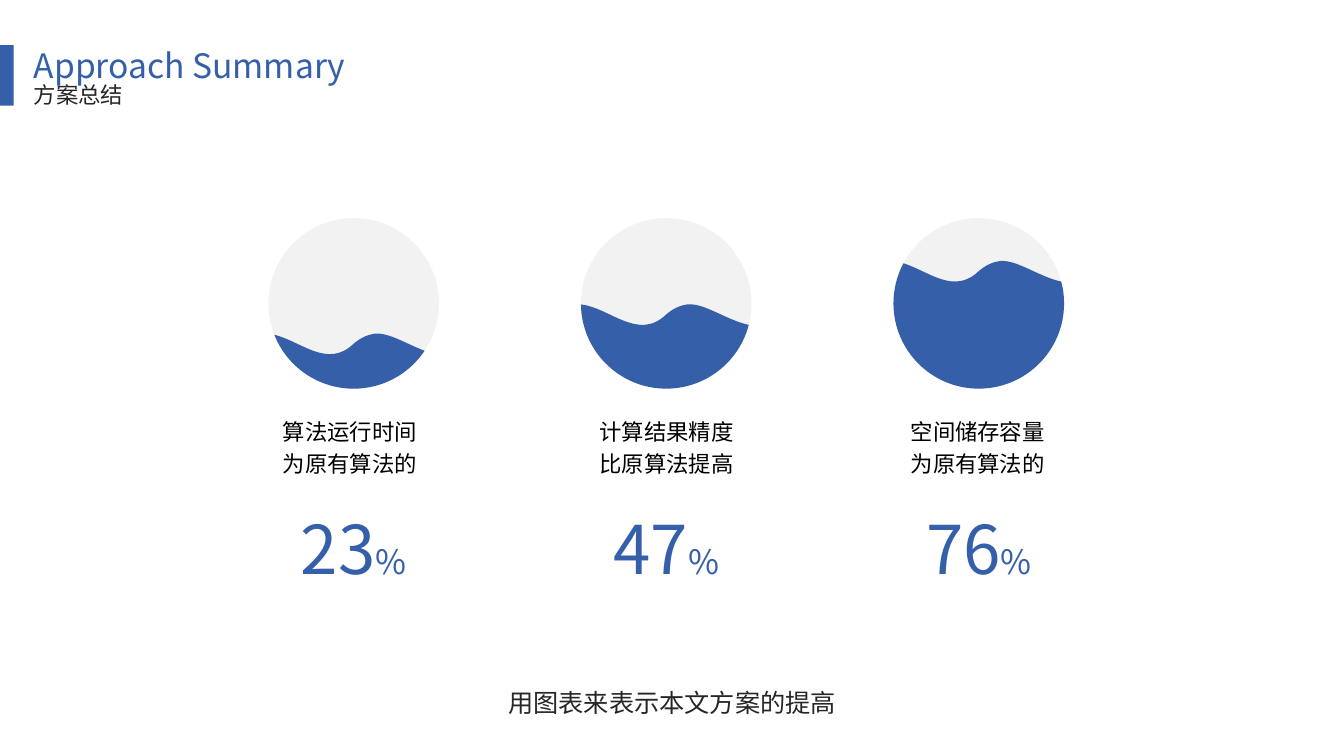
from dataclasses import dataclass
from math import atan2, cos, hypot, pi, sin, tan

from lxml.etree import SubElement
from pptx import Presentation
from pptx.dml.color import RGBColor
from pptx.enum.shapes import MSO_SHAPE
from pptx.enum.text import MSO_ANCHOR, MSO_AUTO_SIZE, PP_ALIGN
from pptx.oxml.ns import qn
from pptx.shapes.autoshape import Shape
from pptx.slide import Slide
from pptx.text.text import TextFrame, _Paragraph
from pptx.util import Inches, Pt

BLUE = RGBColor(0x36, 0x5F, 0xAA)
PALE = RGBColor(0xF2, 0xF2, 0xF2)
DARK = RGBColor(0x26, 0x26, 0x26)
BLACK = RGBColor(0, 0, 0)
FONT = "Noto Sans CJK SC"

CELL = Inches(0.1)
FIRST_COLUMN, COLUMN_STEP = 35.08, 31
GAUGE_ROW, RADIUS = 30.1, 8.46
CAPTION_ROW, PERCENT_ROW = 40.45, 48.25

Point = tuple[float, float]
Curve = list[Point]
WAVE: list[Curve] = [
    [(-8.5, 0), (-5.6, 0.3), (-2.8, 3.7), (0, 1)],
    [(0, 1), (0.7, 0.4), (1.4, 0.1), (2.1, 0)],
    [(2.1, 0), (3.9, -0.15), (6.1, 1.7), (8.5, 2.1)],
]


@dataclass(frozen=True)
class Gauge:
    """One result: its percentage, caption and the row of its wave crest."""

    percent: int
    caption: str
    crest_row: float
    caption_center: float
    caption_width: float


GAUGES = [
    Gauge(23, "算法运行时间为原有算法的", 33.1, 34.7, 16.6),
    Gauge(47, "计算结果精度比原算法提高", 30.2, 66.1, 15.8),
    Gauge(76, "空间储存容量为原有算法的", 25.9, 96.97, 16.2),
]


def cells(*lengths: float) -> list[int]:
    """Turn grid lengths into slide units."""
    return [round(length * CELL) for length in lengths]


def paint(shape: Shape, color: RGBColor) -> None:
    """Give a shape a flat fill without outline or shadow."""
    shape.fill.solid()
    shape.fill.fore_color.rgb = color
    shape.line.fill.background()
    shape.shadow.inherit = False


def add_run(paragraph: _Paragraph, text: str, size: float, color: RGBColor) -> None:
    """Add one run in the deck's font."""
    run = paragraph.add_run()
    run.text = text
    run.font.size = Pt(size)
    run.font.color.rgb = color
    run.font.name = FONT
    SubElement(run.font._element, qn("a:ea"), typeface=FONT)


def add_text(slide: Slide, left: float, top: float, width: float, height: float,
             wrap: bool = True) -> TextFrame:
    """Add a centred text box that grows with its text."""
    frame = slide.shapes.add_textbox(*cells(left, top, width, height)).text_frame
    frame.word_wrap = wrap
    frame.auto_size = MSO_AUTO_SIZE.SHAPE_TO_FIT_TEXT
    frame.paragraphs[0].alignment = PP_ALIGN.CENTER
    return frame


def fill_heading(heading: Shape, text: str, top: float, height: float,
                 size: float, color: RGBColor, spacing: float) -> None:
    """Place a heading placeholder and write its text."""
    heading.left, heading.top, heading.width, heading.height = cells(2.35, top, 71.7, height)
    frame = heading.text_frame
    frame.auto_size = MSO_AUTO_SIZE.NONE
    frame.vertical_anchor = MSO_ANCHOR.BOTTOM
    paragraph = frame.paragraphs[0]
    paragraph.alignment = PP_ALIGN.LEFT
    paragraph.line_spacing = spacing
    paragraph.space_before = Pt(0)
    properties = paragraph._p.get_or_add_pPr()
    properties.set("marL", "0")
    properties.set("indent", "0")
    SubElement(properties, qn("a:buNone"))
    add_run(paragraph, text, size, color)


def split(curve: Curve, t: float) -> tuple[Curve, Curve]:
    """Cut a cubic curve in two at t."""
    before, after, level = [], [], curve
    while level:
        before.append(level[0])
        after.insert(0, level[-1])
        level = [(a + (c - a) * t, b + (d - b) * t)
                 for (a, b), (c, d) in zip(level, level[1:])]
    return before, after


def clip_end(curve: Curve) -> Curve:
    """Keep the part of a curve from its start inside the disc to the rim."""
    low, high = 0.0, 1.0
    for _ in range(30):
        middle = (low + high) / 2
        if hypot(*split(curve, middle)[0][-1]) < RADIUS:
            low = middle
        else:
            high = middle
    return split(curve, low)[0]


def rim_curve(start: float, end: float) -> Curve:
    """Return a cubic curve along the rim between two angles."""
    pull = 4 / 3 * tan((end - start) / 4)
    unit = [(cos(start), sin(start)),
            (cos(start) - pull * sin(start), sin(start) + pull * cos(start)),
            (cos(end) + pull * sin(end), sin(end) - pull * cos(end)),
            (cos(end), sin(end))]
    return [(RADIUS * x, RADIUS * y) for x, y in unit]


def liquid_outline(crest: float) -> Curve:
    """Return the knots and handles of the wave and the rim below it."""
    left, middle, right = [[(x, y + crest) for x, y in curve] for curve in WAVE]
    surface = [clip_end(left[::-1])[::-1], middle, clip_end(right)]
    (first_x, first_y), (last_x, last_y) = surface[0][0], surface[-1][-1]
    start, end = atan2(last_y, last_x), atan2(first_y, first_x) % (2 * pi)
    angles = [start, *(a for a in (0, pi / 2, pi) if start < a < end), end]
    curves = surface + [rim_curve(a, b) for a, b in zip(angles, angles[1:])]
    return [surface[0][0]] + [point for curve in curves for point in curve[1:]]


def bend(shape: Shape) -> None:
    """Turn every three straight segments of an outline into one cubic curve."""
    outline = next(shape._element.iter(qn("a:path")))
    lines = outline.findall(qn("a:lnTo"))
    for first in range(0, len(lines), 3):
        curve = SubElement(outline, qn("a:cubicBezTo"))
        lines[first].addprevious(curve)
        for line in lines[first:first + 3]:
            curve.append(line[0])
            outline.remove(line)


def add_gauge(slide: Slide, gauge: Gauge, center: float) -> None:
    """Draw a filled disc with its caption and percentage."""
    group = slide.shapes.add_group_shape()
    disc = group.shapes.add_shape(MSO_SHAPE.OVAL, *cells(
        center - RADIUS, GAUGE_ROW - RADIUS, 2 * RADIUS, 2 * RADIUS))
    paint(disc, PALE)
    outline = [tuple(cells(center + x, GAUGE_ROW + y))
               for x, y in liquid_outline(gauge.crest_row - GAUGE_ROW)]
    builder = group.shapes.build_freeform(*outline[0])
    builder.add_line_segments(outline[1:], close=True)
    liquid = builder.convert_to_shape()
    bend(liquid)
    paint(liquid, BLUE)

    caption = add_text(slide, gauge.caption_center - gauge.caption_width / 2,
                       CAPTION_ROW, gauge.caption_width, 7.5).paragraphs[0]
    caption.line_spacing = 1.2
    add_run(caption, gauge.caption, 16, BLACK)

    percentage = add_text(slide, center - 9.55, PERCENT_ROW, 19.1, 10.7).paragraphs[0]
    percentage.line_spacing = 1.2
    add_run(percentage, str(gauge.percent), 48, BLUE)
    add_run(percentage, "%", 24, BLUE)


def main() -> None:
    """Build the summary slide."""
    deck = Presentation()
    deck.slide_width, deck.slide_height = Inches(13.33), Inches(7.5)
    slide = deck.slides.add_slide(deck.slide_layouts[1])
    accent = slide.shapes.add_shape(MSO_SHAPE.RECTANGLE, *cells(0, 4.48, 1.36, 6))
    paint(accent, BLUE)
    title, subtitle = slide.placeholders
    fill_heading(title, "Approach Summary", 4.3, 4.6, 24, BLUE, 0.8)
    fill_heading(subtitle, "方案总结", 7.8, 3.5, 16, DARK, 0.9)

    conclusion = add_text(slide, 49.25, 67.7, 34.8, 4, wrap=False).paragraphs[0]
    add_run(conclusion, "用图表来表示本文方案的提高", 18, DARK)
    for column, gauge in enumerate(GAUGES):
        add_gauge(slide, gauge, FIRST_COLUMN + column * COLUMN_STEP)
    deck.save("out.pptx")


if __name__ == "__main__":
    main()
